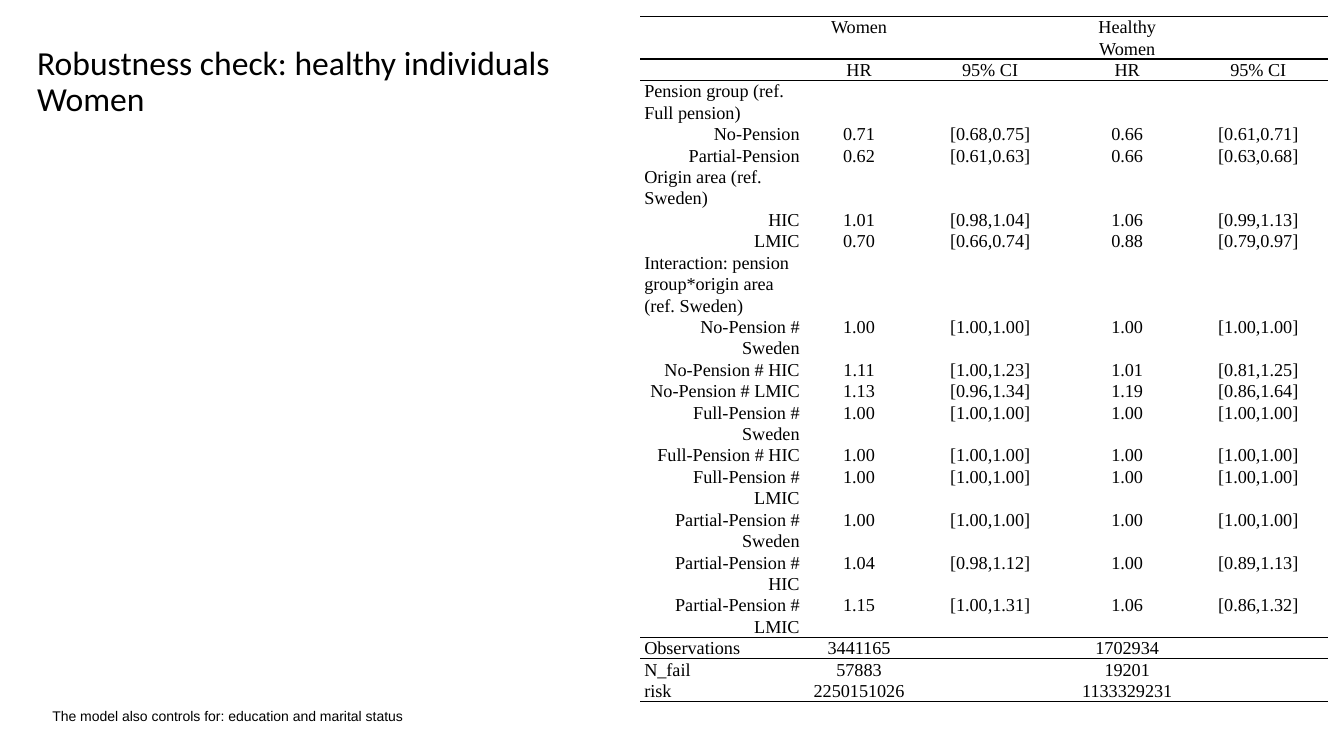
from lxml.etree import SubElement
from pptx import Presentation
from pptx.dml.color import RGBColor
from pptx.enum.text import MSO_ANCHOR as ANCHOR, PP_ALIGN as ALIGN
from pptx.oxml.ns import qn
from pptx.util import Pt

PX = 9144
BLACK = RGBColor(0, 0, 0)
WHITE = RGBColor(255, 255, 255)
NO_GRID_STYLE = "{2D5ABB26-0587-4C30-8999-92F81FD0307C}"

COLUMN_WIDTHS = [162, 110, 150, 122, 138]
LINE_HEIGHTS = {1: 18, 2: 38, 3: 57}
RULED_ABOVE = {0, 1, 18}
RULED_BELOW = {0, 17, 20}

REF_HAZARD = ["1.00", "[1.00,1.00]"]
ESTIMATES = [
    (2, ["", "Women", "", "Healthy Women", ""]),
    (1, ["", "HR", "95% CI", "HR", "95% CI"]),
    (2, ["Pension group (ref. Full pension)"]),
    (1, ["No-Pension", "0.71", "[0.68,0.75]", "0.66", "[0.61,0.71]"]),
    (1, ["Partial-Pension", "0.62", "[0.61,0.63]", "0.66", "[0.63,0.68]"]),
    (2, ["Origin area (ref. Sweden)"]),
    (1, ["HIC", "1.01", "[0.98,1.04]", "1.06", "[0.99,1.13]"]),
    (1, ["LMIC", "0.70", "[0.66,0.74]", "0.88", "[0.79,0.97]"]),
    (3, ["Interaction: pension group*origin area (ref. Sweden)"]),
    (2, ["No-Pension # Sweden", *REF_HAZARD, *REF_HAZARD]),
    (1, ["No-Pension # HIC", "1.11", "[1.00,1.23]", "1.01", "[0.81,1.25]"]),
    (1, ["No-Pension # LMIC", "1.13", "[0.96,1.34]", "1.19", "[0.86,1.64]"]),
    (2, ["Full-Pension # Sweden", *REF_HAZARD, *REF_HAZARD]),
    (1, ["Full-Pension # HIC", *REF_HAZARD, *REF_HAZARD]),
    (1, ["Full-Pension # LMIC", *REF_HAZARD, *REF_HAZARD]),
    (2, ["Partial-Pension # Sweden", *REF_HAZARD, *REF_HAZARD]),
    (2, ["Partial-Pension # HIC", "1.04", "[0.98,1.12]", "1.00", "[0.89,1.13]"]),
    (2, ["Partial-Pension # LMIC", "1.15", "[1.00,1.31]", "1.06", "[0.86,1.32]"]),
    (1, ["Observations", "3441165", "", "1702934", ""]),
    (1, ["N_fail", "57883", "", "19201", ""]),
    (1, ["risk", "2250151026", "", "1133329231", ""]),
]


def set_font(paragraph, name, size):
    paragraph.font.name = name
    paragraph.font.size = Pt(size)
    paragraph.font.color.rgb = BLACK


def add_text(slide, box, text, name, size, anchor=ANCHOR.TOP, spacing=1.0):
    frame = slide.shapes.add_textbox(*(PX * length for length in box)).text_frame
    frame.word_wrap = True
    frame.vertical_anchor = anchor
    paragraph = frame.paragraphs[0]
    paragraph.text = text
    paragraph.line_spacing = spacing
    set_font(paragraph, name, size)


def rule_edge(cell, edge):
    line = SubElement(cell._tc.get_or_add_tcPr(), qn(f"a:{edge}"), w=str(Pt(1)))
    fill = SubElement(line, qn("a:solidFill"))
    SubElement(fill, qn("a:srgbClr"), val=str(BLACK))


def fill_cell(cell, text, align):
    cell.margin_left = cell.margin_right = 4 * PX
    cell.margin_top = cell.margin_bottom = 0
    paragraph = cell.text_frame.paragraphs[0]
    paragraph.text = text
    paragraph.alignment = align
    paragraph.line_spacing = 1.07
    paragraph.space_after = Pt(8)
    set_font(paragraph, "Times New Roman", 13)


def label_align(values):
    is_estimate = len(values) == 5 and values[2]
    return ALIGN.RIGHT if is_estimate else ALIGN.LEFT


def add_estimates(slide, left, top):
    heights = [LINE_HEIGHTS[lines] for lines, _ in ESTIMATES]
    frame = slide.shapes.add_table(
        len(heights), len(COLUMN_WIDTHS), left * PX, top * PX,
        sum(COLUMN_WIDTHS) * PX, sum(heights) * PX)
    table = frame.table
    table.first_row = table.horz_banding = False
    table._tbl.tblPr.find(qn("a:tableStyleId")).text = NO_GRID_STYLE
    for column, width in zip(table.columns, COLUMN_WIDTHS):
        column.width = width * PX
    for row, (_, values) in enumerate(ESTIMATES):
        table.rows[row].height = heights[row] * PX
        for col in range(len(COLUMN_WIDTHS)):
            cell = table.cell(row, col)
            text = values[col] if col < len(values) else ""
            fill_cell(cell, text, ALIGN.CENTER if col else label_align(values))
            if row in RULED_ABOVE:
                rule_edge(cell, "lnT")
            if row in RULED_BELOW:
                rule_edge(cell, "lnB")
            cell.fill.background()


def main():
    deck = Presentation()
    deck.slide_width, deck.slide_height = 1333 * PX, 750 * PX
    slide = deck.slides.add_slide(deck.slide_layouts[6])
    slide.background.fill.solid()
    slide.background.fill.fore_color.rgb = WHITE
    add_estimates(slide, 635, 16)
    add_text(slide, (42, 697, 551, 27),
             "The model also controls for: education and marital status", "Arial", 10)
    add_text(slide, (27, 26, 595, 112),
             "Robustness check: healthy individuals\vWomen", "Calibri", 24,
             ANCHOR.MIDDLE, 0.9)
    deck.save("out.pptx")


if __name__ == "__main__":
    main()
